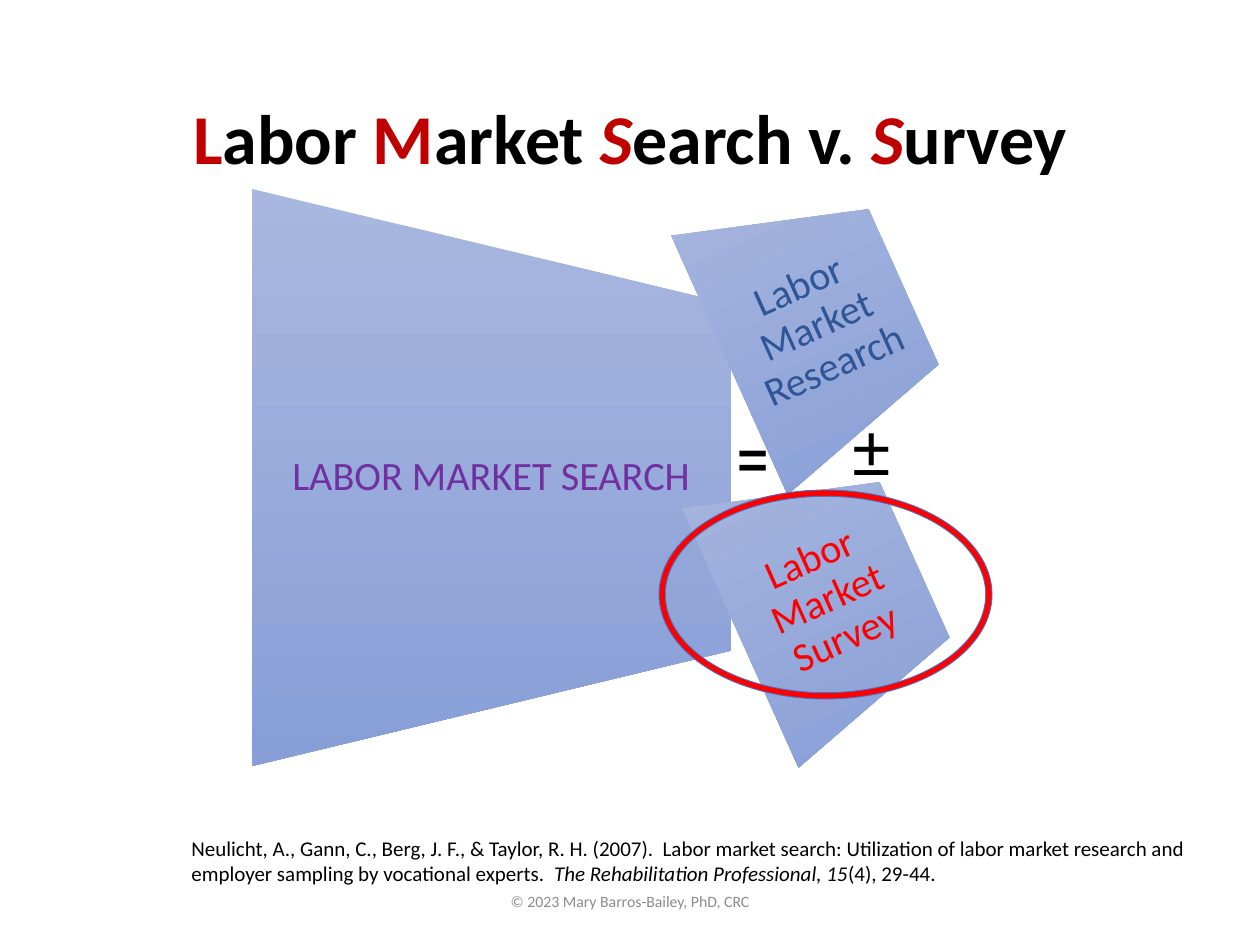
"""Build the labor market search versus survey slide."""
import pptx
import pptx.dml.color
import pptx.enum.shapes
import pptx.enum.text
import pptx.util

PX = 914400 / 126
RED, BLACK = "C00000", "000000"
ALIGN = pptx.enum.text.PP_ALIGN
MID = pptx.enum.text.MSO_ANCHOR.MIDDLE

TITLE = [
    ("L", {"hue": RED}), ("abor ", {}), ("M", {"hue": RED}), ("arket ", {}),
    ("S", {"hue": RED, "tilt": True}), ("earch v. ", {}),
    ("S", {"hue": RED, "tilt": True}), ("urvey", {}),
]
PANELS = [
    ("LABOR MARKET SEARCH", (252, 189, 479, 577), 0, "7030A0"),
    ("Labor Market Research", (721, 184, 191, 284), 335.8, "2F5597"),
    ("Labor Market Survey", (732, 457, 191, 284), 335.8, "FF0000"),
]
CITE = [
    ("Neulicht, A., Gann, C., Berg, J. F., & Taylor, R. H. (2007).  Labor market "
     "search: Utilization of labor market research and employer sampling by "
     "vocational experts.  ", {}),
    ("The Rehabilitation Professional, 15", {"tilt": True}),
    ("(4), 29-44.", {}),
]
NOTES = [
    ([("±", {})], (840, 399, 73, 97), {"size": 40, "font": "Arial"}),
    ([("=", {})], (725, 420, 42, 77), {"size": 30, "font": "Arial", "bold": True}),
    (CITE, (179, 829, 1029, 63), {"size": 12}),
    ([("© 2023 Mary Barros-Bailey, PhD, CRC", {})], (417, 876, 426, 50),
     {"size": 9, "hue": "8C8C8C", "align": ALIGN.CENTER, "anchor": MID}),
]
RING = (659, 490, 333, 209)


def emu(px):
    return round(px * PX)


def rgb(code):
    return pptx.dml.color.RGBColor.from_string(code)


def write(shape, runs, size, font="Calibri", hue=BLACK, bold=False,
          align=ALIGN.LEFT, anchor=pptx.enum.text.MSO_ANCHOR.TOP, lead=None, pad=None):
    frame = shape.text_frame
    frame.word_wrap = True
    frame.auto_size = pptx.enum.text.MSO_AUTO_SIZE.NONE
    frame.vertical_anchor = anchor
    if pad:
        frame.margin_left = frame.margin_right = emu(pad[0])
        frame.margin_top = frame.margin_bottom = emu(pad[1])
    para = frame.paragraphs[0]
    para.alignment = align
    para.line_spacing = lead
    for text, style in runs:
        run = para.add_run()
        run.text = text
        run.font.name = font
        run.font.size = pptx.util.Pt(size)
        run.font.bold = bold
        run.font.italic = style.get("tilt", False)
        run.font.color.rgb = rgb(style.get("hue", hue))


def add_panel(slide, text, box, turn, hue):
    left, top, width, height = box
    drop = height / 5
    pen = slide.shapes.build_freeform(emu(left), emu(top))
    corners = [(width, drop), (width, height - drop), (0, height)]
    pen.add_line_segments([(emu(left + x), emu(top + y)) for x, y in corners])
    shape = pen.convert_to_shape()
    shape.rotation = turn
    shape.shadow.inherit = False
    shape.line.fill.background()
    shape.fill.gradient()
    shape.fill.gradient_angle = 270
    for stop, code in zip(shape.fill.gradient_stops, ("A8B7DF", "889ED7")):
        stop.color.rgb = rgb(code)
    write(shape, [(text, {})], 23, hue=hue, align=ALIGN.CENTER, anchor=MID,
          lead=0.9, pad=(18, drop))


def main():
    deck = pptx.Presentation()
    deck.slide_width, deck.slide_height = emu(1260), emu(945)
    slide = deck.slides.add_slide(deck.slide_layouts[5])
    title = slide.shapes.title
    title.left, title.top, title.width, title.height = map(emu, (87, 50, 1086, 183))
    write(title, TITLE, 40, bold=True, align=ALIGN.CENTER, anchor=MID, lead=0.9)
    for panel in PANELS:
        add_panel(slide, *panel)
    for runs, box, style in NOTES:
        write(slide.shapes.add_textbox(*map(emu, box)), runs, **style)
    ring = slide.shapes.add_shape(pptx.enum.shapes.MSO_SHAPE.DONUT, *map(emu, RING))
    ring.adjustments[0] = 0.03
    ring.shadow.inherit = False
    ring.fill.solid()
    ring.fill.fore_color.rgb = rgb("FF0000")
    ring.line.color.rgb = rgb("4472C4")
    ring.line.width = pptx.util.Pt(0.5)
    deck.save("out.pptx")


if __name__ == "__main__":
    main()
